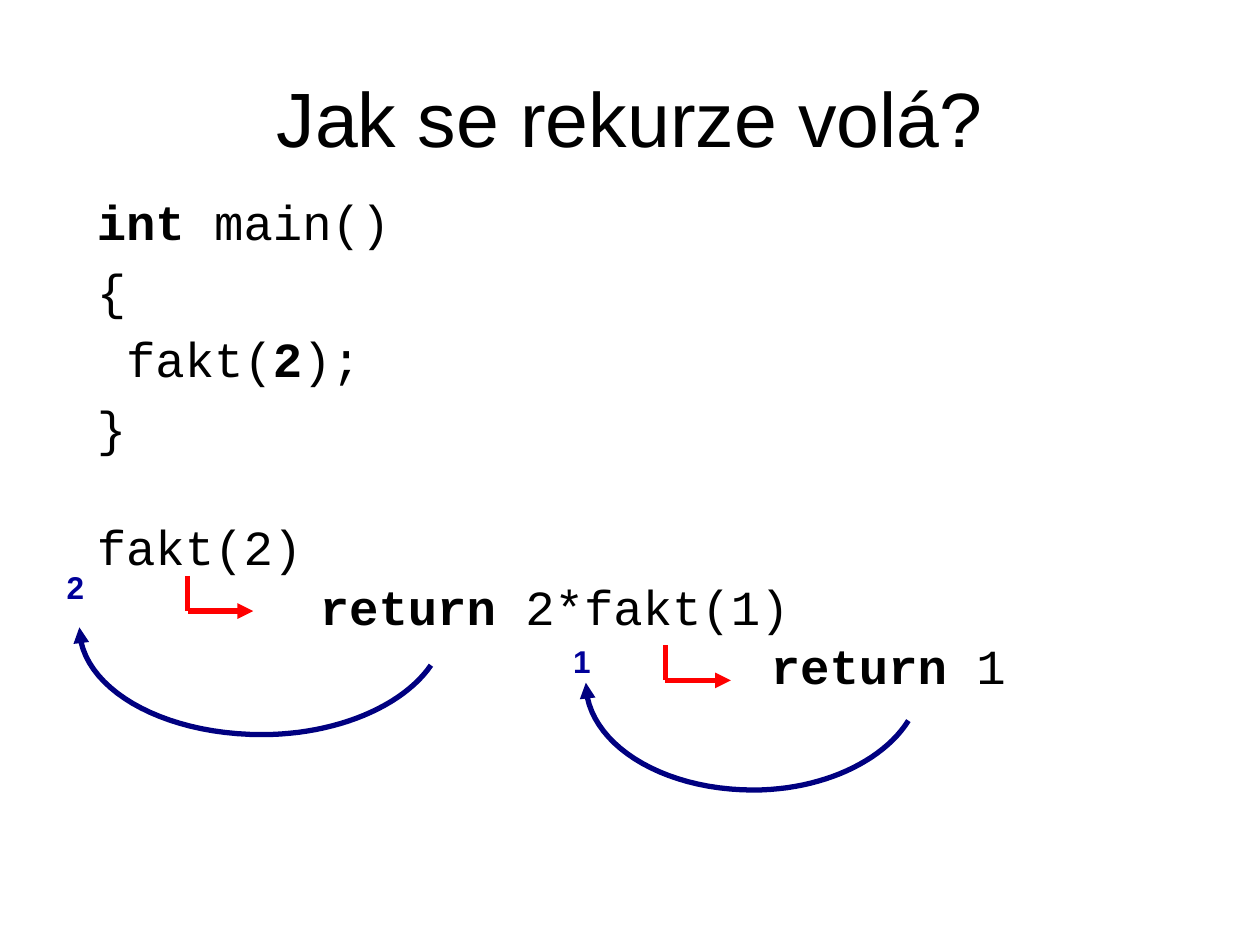
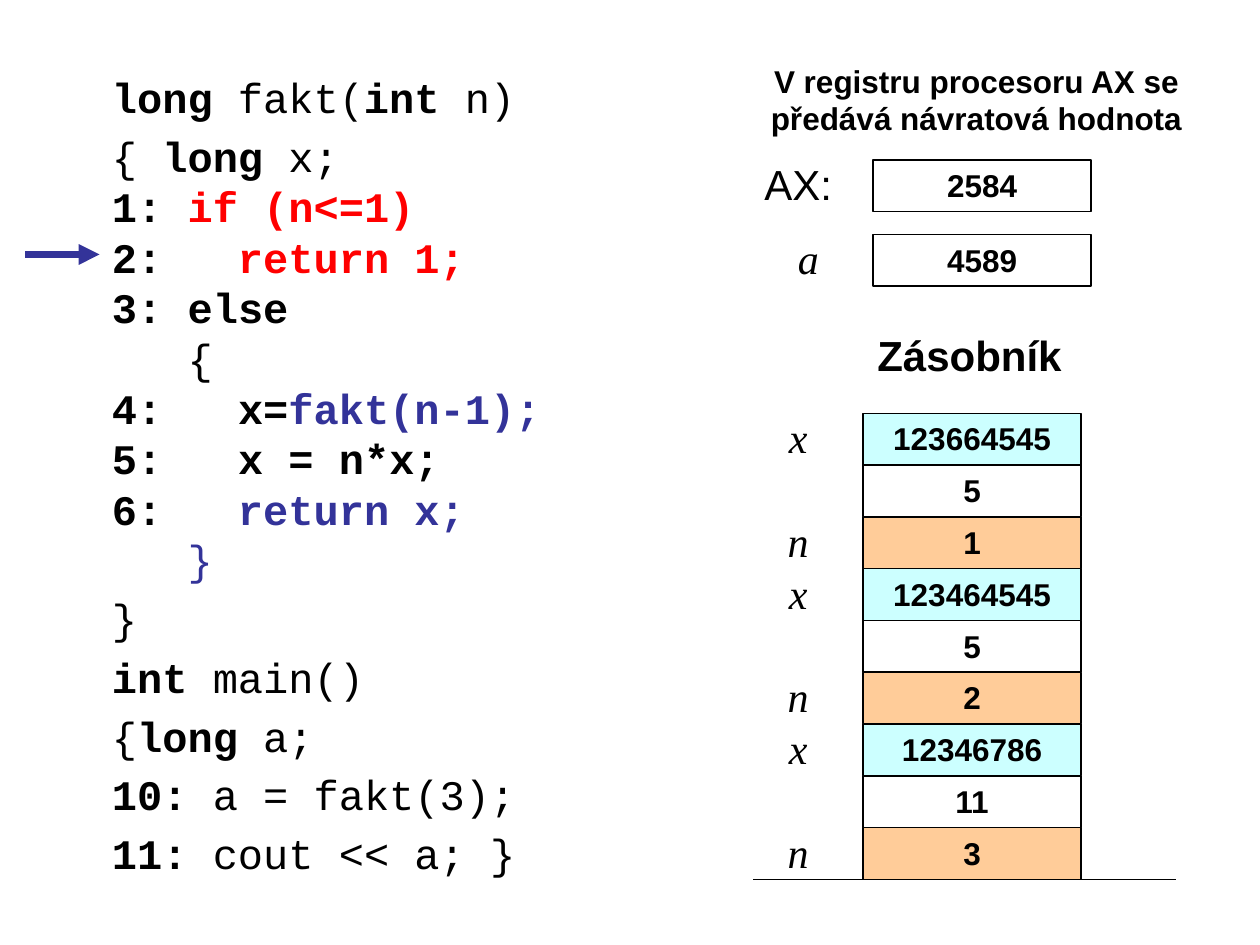
from lxml import etree
from pptx import Presentation
from pptx.dml.color import RGBColor
from pptx.enum.shapes import MSO_CONNECTOR, MSO_SHAPE
from pptx.enum.text import MSO_ANCHOR, PP_ALIGN
from pptx.oxml.ns import qn
from pptx.util import Inches, Pt

BLACK, RED, INDIGO, NAVY, BLUE = "000000", "FF0000", "333399", "000080", "000099"
CYAN, ORANGE = "CCFFFF", "FFCC99"

PLAIN, BOLD = {}, {"bold": True}
BOLD_RED, BOLD_INDIGO = {"bold": True, "color": RED}, {"bold": True, "color": INDIGO}
TITLE = {"name": "Arial", "size": 44}
HEADING = {"name": "Arial", "size": 24, "bold": True}
REGISTER = {"name": "Arial", "size": 24}
VARIABLE = {"name": "Times New Roman", "size": 24, "italic": True}
VALUE = {"name": "Arial", "size": 18, "bold": True}
RESULT = {**VALUE, "color": BLUE}
CODE_LARGE = {"name": "Courier New", "size": 28}
CODE = {"name": "Courier New", "size": 24}

# Code lines: (share of the font size left above the line, runs)
MAIN_CODE = [
    (0.2, [("int", BOLD), (" main()", PLAIN)]),
    (0.2, [("{", PLAIN)]),
    (0.2, [(" fakt(", PLAIN), ("2", BOLD), (");", PLAIN)]),
    (0.2, [("}", PLAIN)]),
]
# Calls: left, top, width, runs
CALLS = [
    (0.67, 4.1, 2.0, [("fakt(2)", PLAIN)]),
    (2.44, 4.58, 4.29, [("return", BOLD), (" 2*fakt(1)", PLAIN)]),
    (6.02, 5.05, 2.2, [("return", BOLD), (" 1", PLAIN)]),
]
# Corner of each call arrow: x, y
DESCENTS = [(1.49, 4.85), (5.28, 5.4)]
# Returned value, its left and top, and the box of the arc leading to it
RETURNS = [
    ("1", (4.45, 5.05), (4.65, 5.41, 2.56, 0.86)),
    ("2", (0.43, 4.46), (0.63, 4.97, 2.79, 0.86)),
]
# Two cubic curves, as shares of the arc's box
ARC = [
    [(1, 0.36), (0.92, 0.74), (0.73, 1), (0.52, 1)],
    [(0.52, 1), (0.23, 1), (0, 0.56), (0, 0.01)],
]
ARC_STEPS = 24

FAKT_CODE = [
    (0.2, [("long", BOLD), (" fakt(", PLAIN), ("int", BOLD), (" n)", PLAIN)]),
    (0.2, [("{ ", PLAIN), ("long", BOLD), (" x;", PLAIN)]),
    (0, [("1: ", BOLD), ("if (n<=1)", BOLD_RED)]),
    (0, [("2:  ", BOLD), (" return 1;", BOLD_RED)]),
    (0, [("3: else", BOLD)]),
    (0, [("   {", PLAIN)]),
    (0, [("4:   x=", BOLD), ("fakt(n-1);", BOLD_INDIGO)]),
    (0, [("5:   x = n*x;", BOLD)]),
    (0, [("6:", BOLD), ("   return x;", BOLD_INDIGO)]),
    (0, [("   }", {"color": INDIGO})]),
    (0.2, [("}", PLAIN)]),
    (0.2, [("int", BOLD), (" main()", PLAIN)]),
    (0.2, [("{", PLAIN), ("long", BOLD), (" a;", PLAIN)]),
    (0.2, [("10:", BOLD), (" a = fakt(3);", PLAIN)]),
    (0.2, [("11:", BOLD), (" cout << a; }", PLAIN)]),
]
# Stack frames from the top: x, return address, n
FRAMES = [("123664545", "5", "1"), ("123464545", "5", "2"), ("12346786", "11", "3")]
FRAME_CELLS = [("x", CYAN), ("", None), ("n", ORANGE)]
STACK_LEFT, STACK_TOP, STACK_FLOOR = 6.85, 3.28, 6.98
CELL_WIDTH, CELL_HEIGHT = 1.73, 0.41
MEMORY_LEFT = 6.93


def rgb(hex_code):
    return RGBColor.from_string(hex_code)


def add_run(paragraph, text, style):
    run = paragraph.add_run()
    run.text = text
    style = {"color": BLACK, "bold": False, **style}
    run.font.color.rgb = rgb(style.pop("color"))
    style["size"] = Pt(style["size"])
    for attribute, value in style.items():
        setattr(run.font, attribute, value)


def write(frame, lines, base, align=PP_ALIGN.LEFT, spacing=None, anchor=MSO_ANCHOR.TOP):
    """Fill a text frame with lines of (space above, runs)."""
    frame.word_wrap = True
    frame.vertical_anchor = anchor
    for index, (above, runs) in enumerate(lines):
        paragraph = frame.add_paragraph() if index else frame.paragraphs[0]
        layout = {"alignment": align, "space_before": Pt(above * base["size"]),
                  "line_spacing": spacing}
        for attribute, value in layout.items():
            setattr(paragraph, attribute, value)
        for text, style in runs:
            add_run(paragraph, text, {**base, **style})


def add_lines(slide, box, lines, base, **layout):
    frame = slide.shapes.add_textbox(*map(Inches, box)).text_frame
    write(frame, lines, base, **layout)


def add_label(slide, box, text, style, align=PP_ALIGN.CENTER, **layout):
    add_lines(slide, box, [(0.5, [(text, PLAIN)])], style, align=align, **layout)


def set_line(shape, color, width, arrow=False):
    shape.line.color.rgb = rgb(color)
    shape.line.width = Pt(width)
    if arrow:
        etree.SubElement(shape.line._get_or_add_ln(), qn("a:tailEnd"), type="triangle")


def add_line(slide, start, end, color, width, arrow=False):
    line = slide.shapes.add_connector(MSO_CONNECTOR.STRAIGHT, *map(Inches, (*start, *end)))
    set_line(line, color, width, arrow)
    etree.SubElement(line._element.spPr, qn("a:effectLst"))


def curve_point(controls, t):
    weights = ((1 - t) ** 3, 3 * t * (1 - t) ** 2, 3 * t * t * (1 - t), t ** 3)
    return tuple(sum(w * c for w, c in zip(weights, axis)) for axis in zip(*controls))


def add_return_arc(slide, box):
    left, top, width, height = box
    shares = [curve_point(curve, step / ARC_STEPS)
              for curve in ARC for step in range(ARC_STEPS + 1)]
    points = [(Inches(left + x * width), Inches(top + y * height)) for x, y in shares]
    builder = slide.shapes.build_freeform(*points[0])
    builder.add_line_segments(points[1:], close=False)
    arc = builder.convert_to_shape()
    arc.shadow.inherit = False
    arc.fill.background()
    set_line(arc, NAVY, 3, arrow=True)


def add_cell(slide, left, top, value, fill=None, name="", name_style=VARIABLE):
    """Draw a memory cell with the name of its variable on the left."""
    cell = slide.shapes.add_shape(
        MSO_SHAPE.RECTANGLE, *map(Inches, (left, top, CELL_WIDTH, CELL_HEIGHT)))
    cell.shadow.inherit = False
    if fill:
        cell.fill.solid()
        cell.fill.fore_color.rgb = rgb(fill)
    else:
        cell.fill.background()
    set_line(cell, BLACK, 0.75)
    write(cell.text_frame, [(0.5, [(value, PLAIN)])], VALUE, align=PP_ALIGN.CENTER)
    if name:
        shift, width = (0.99, 0.79) if name_style is REGISTER else (0.79, 0.55)
        add_label(slide, (left - shift, top - 0.06, width, 0.5), name, name_style)


def build_call_slide(slide):
    add_label(slide, (0.5, 0.3, 9, 1.25), "Jak se rekurze volá?", TITLE,
              anchor=MSO_ANCHOR.MIDDLE)
    add_lines(slide, (0.67, 1.47, 2.7, 2.16), MAIN_CODE, CODE_LARGE)
    for left, top, width, runs in CALLS:
        add_lines(slide, (left, top, width, 0.55), [(0.2, runs)], CODE_LARGE, spacing=0.9)
    for x, y in DESCENTS:
        add_line(slide, (x, y - 0.28), (x, y), RED, 3)
        add_line(slide, (x, y), (x + 0.52, y), RED, 3, arrow=True)
    for result, corner, arc_box in RETURNS:
        add_return_arc(slide, arc_box)
        add_label(slide, (*corner, 0.35, 0.4), result, RESULT, align=PP_ALIGN.LEFT)


def build_stack_slide(slide):
    add_lines(slide, (0.79, 0.52, 4.29, 6.73), FAKT_CODE, CODE)
    add_line(slide, (0.2, 2.02), (0.79, 2.02), INDIGO, 4, arrow=True)
    add_label(slide, (5.98, 0.44, 3.54, 0.7),
              "V registru procesoru AX se předává návratová hodnota", VALUE)
    add_cell(slide, MEMORY_LEFT, 1.27, "2584", name="AX:", name_style=REGISTER)
    add_cell(slide, MEMORY_LEFT, 1.86, "4589", name="a")

    add_label(slide, (5.98, 2.57, 3.43, 0.5), "Zásobník", HEADING)
    cells = [(value, fill, name) for frame in FRAMES
             for value, (name, fill) in zip(frame, FRAME_CELLS)]
    pitch = (STACK_FLOOR - STACK_TOP) / len(cells)
    for row, (value, fill, name) in enumerate(cells):
        add_cell(slide, STACK_LEFT, STACK_TOP + row * pitch, value, fill, name)
    add_line(slide, (5.98, STACK_FLOOR), (9.33, STACK_FLOOR), BLACK, 0.75)


def main():
    deck = Presentation()
    deck.slide_width, deck.slide_height = Inches(10), Inches(7.5)
    blank = deck.slide_layouts[6]
    for build in (build_call_slide, build_stack_slide):
        build(deck.slides.add_slide(blank))
    deck.save("out.pptx")


if __name__ == "__main__":
    main()
